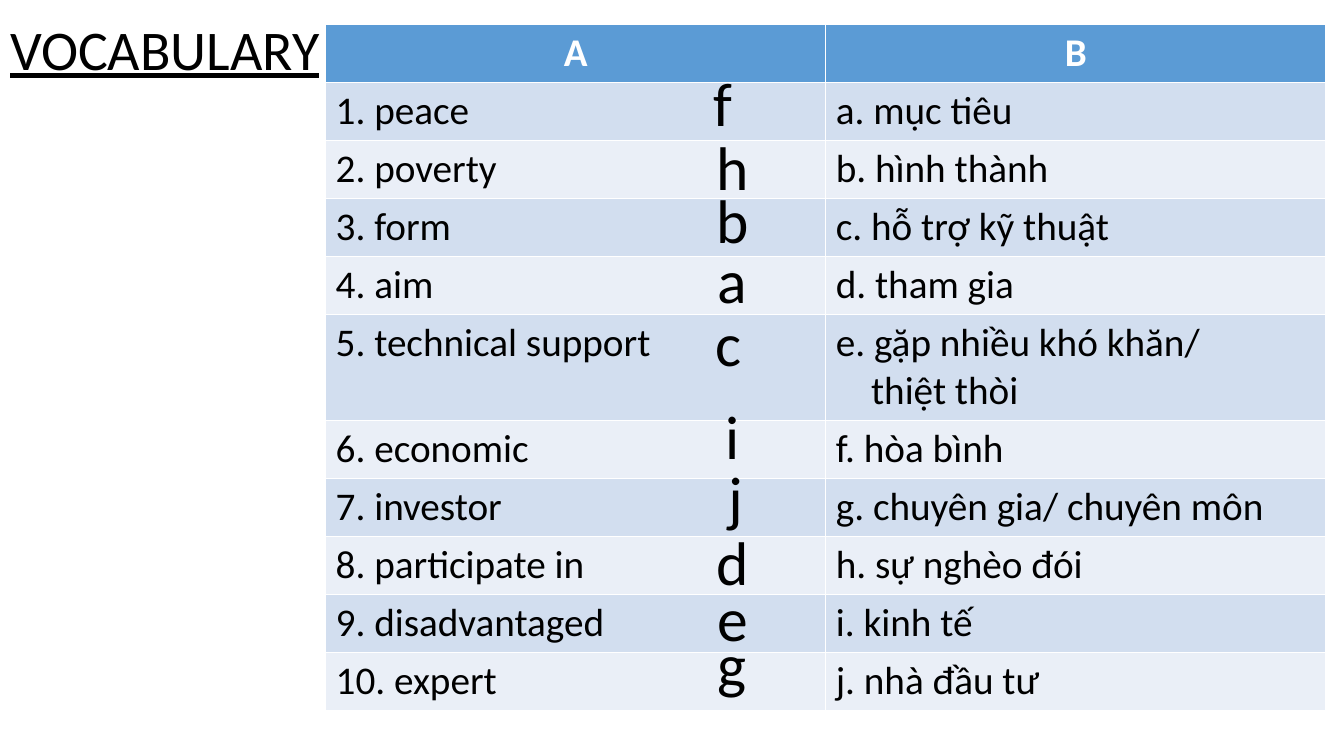
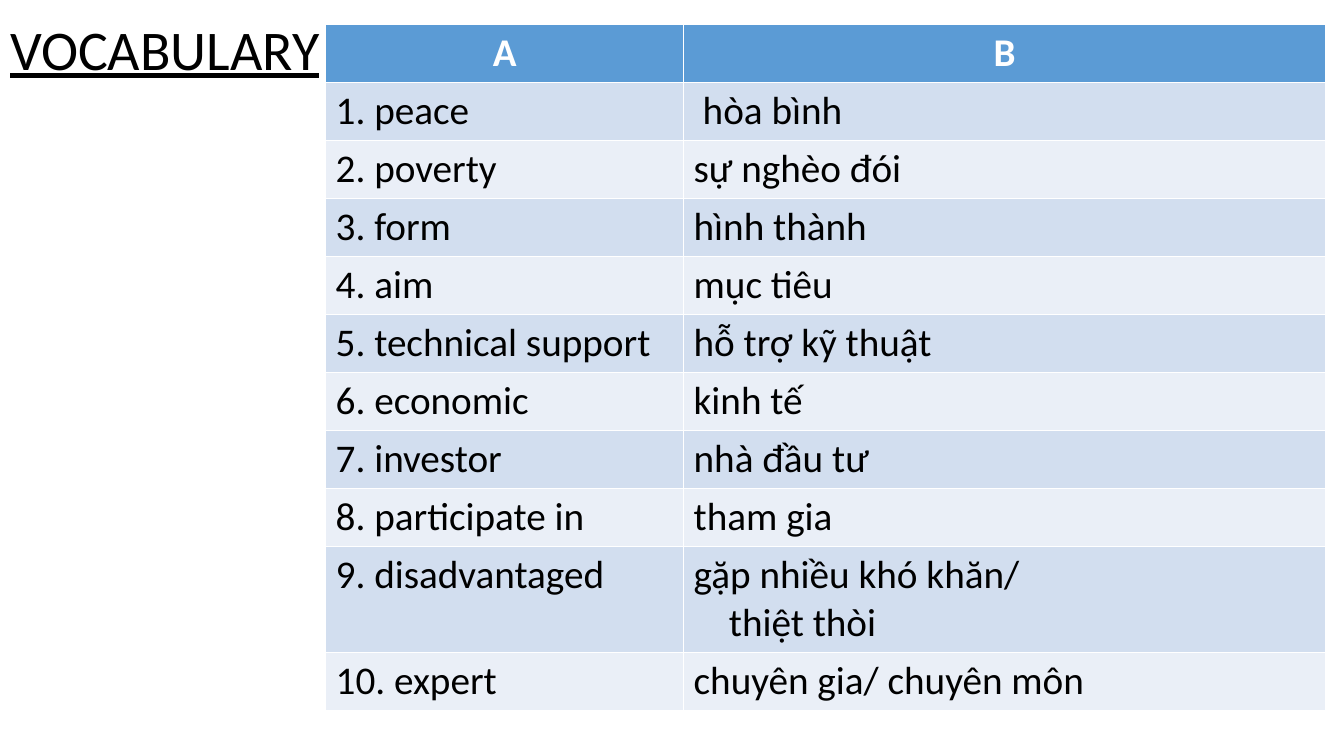
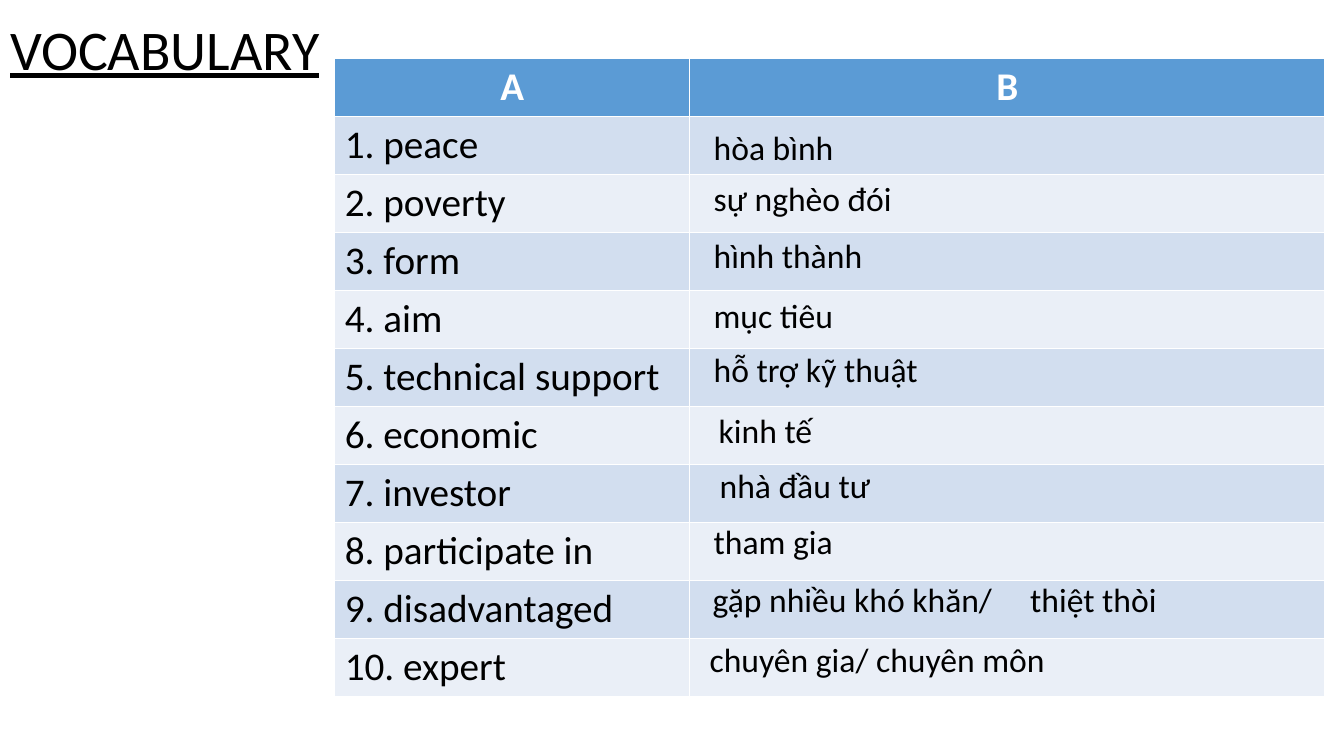
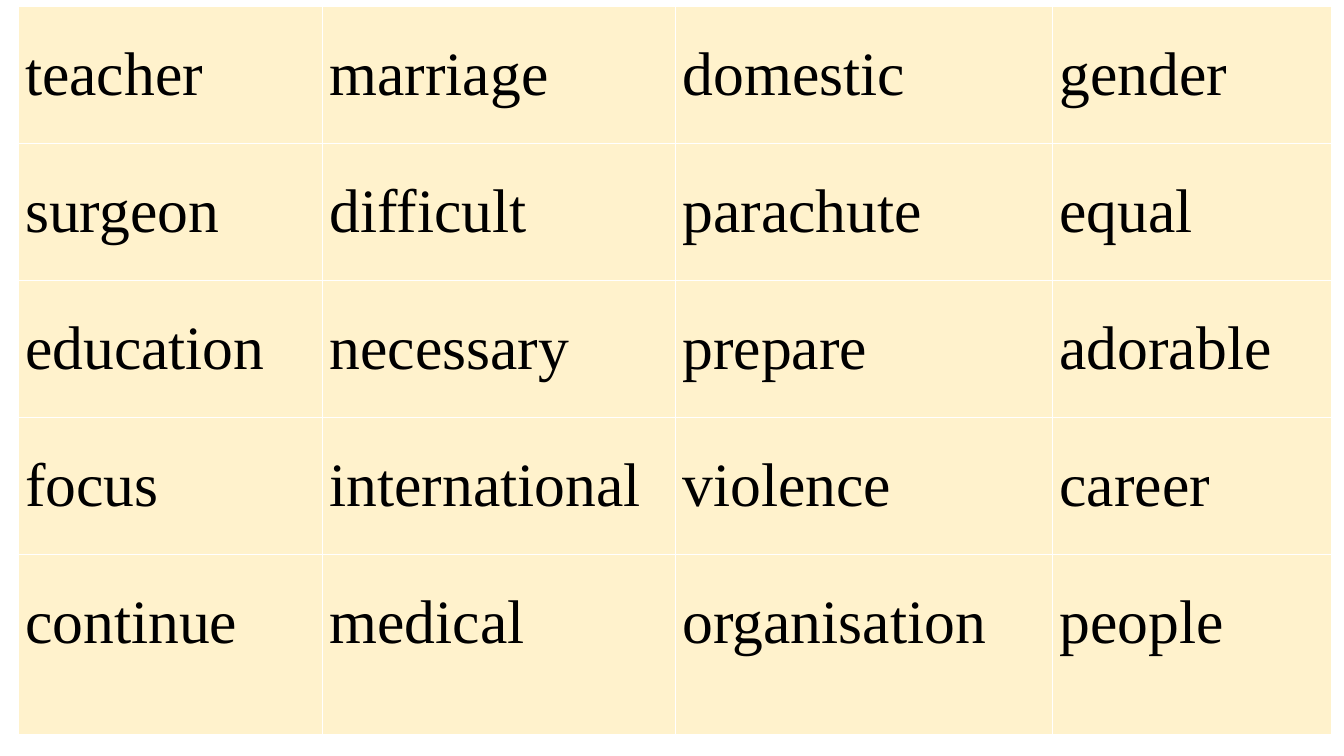
from lxml import etree
from pptx import Presentation
from pptx.dml.color import RGBColor
from pptx.enum.text import MSO_ANCHOR, MSO_AUTO_SIZE, PP_ALIGN
from pptx.oxml.ns import qn
from pptx.util import Inches, Pt

COLORS = {
    "text": "000000",
    "header_text": "FFFFFF",
    "header": "5B9BD5",
    "odd_row": "D2DEEF",
    "even_row": "EAEFF7",
    "word_cell": "FFF2CC",
}

# Word, its meaning, and the letter that answers it in the matching exercise
VOCABULARY = [
    ("peace", "hòa bình", "f"),
    ("poverty", "sự nghèo đói", "h"),
    ("form", "hình thành", "b"),
    ("aim", "mục tiêu", "a"),
    ("technical support", "hỗ trợ kỹ thuật", "c"),
    ("economic", "kinh tế", "i"),
    ("investor", "nhà đầu tư", "j"),
    ("participate in", "tham gia", "d"),
    ("disadvantaged", "gặp nhiều khó khăn/\nthiệt thòi", "e"),
    ("expert", "chuyên gia/ chuyên môn", "g"),
]
words = [f"{i}. {word}" for i, (word, _, _) in enumerate(VOCABULARY, 1)]
meanings = [meaning for _, meaning, _ in VOCABULARY]
choices = sorted(f"{letter}. {meaning}" for _, meaning, letter in VOCABULARY)


def format_text(tf, size, color="text", font="Calibri", bold=False,
                align=PP_ALIGN.LEFT):
    for p in tf.paragraphs:
        p.alignment = align
        for r in p.runs:
            r.font.size = Pt(size)
            r.font.name = font
            r.font.bold = bold
            r.font.color.rgb = RGBColor.from_string(COLORS[color])


def add_text(s, left, top, width, height, content, size, align=PP_ALIGN.LEFT):
    sp = s.shapes.add_textbox(Inches(left), Inches(top), Inches(width), Inches(height))
    tf = sp.text_frame
    tf.word_wrap = True
    tf.text = content
    format_text(tf, size, align=align)
    return tf


prs = Presentation()
prs.slide_width = Inches(13.33)
prs.slide_height = Inches(7.5)

# Slides 1 to 3: title and two-column vocabulary table
# (left, top, column widths, texts of column B)
layouts = [
    (3.23, 0.24, (4.96, 4.96), choices),
    (3.23, 0.24, (3.55, 6.37), meanings),
    (3.32, 0.58, (3.52, 6.3), [""] * len(words)),
]
slides, tables = [], []
for left, top, widths, column_b in layouts:
    s = prs.slides.add_slide(prs.slide_layouts[5])
    title = s.shapes.title
    title.left, title.top = Inches(0), Inches(0.09)
    title.width, title.height = Inches(3.32), Inches(0.77)
    tf = title.text_frame
    tf.text = "VOCABULARY"
    tf.auto_size = MSO_AUTO_SIZE.NONE
    tf.vertical_anchor = MSO_ANCHOR.TOP
    format_text(tf, 40)
    tf.paragraphs[0].runs[0].font.underline = True

    rows = [("A", "B"), *zip(words, column_b)]
    table = s.shapes.add_table(len(rows), 2, Inches(left), Inches(top),
                               Inches(sum(widths)), Inches(6.23)).table
    for column, width in zip(table.columns, widths):
        column.width = Inches(width)
    for i, row in enumerate(rows):
        fill = "header" if i == 0 else "odd_row" if i % 2 else "even_row"
        for j, content in enumerate(row):
            cell = table.cell(i, j)
            cell.fill.solid()
            cell.fill.fore_color.rgb = RGBColor.from_string(COLORS[fill])
            cell.text = content
            if i == 0:
                format_text(cell.text_frame, 28, "header_text", bold=True,
                            align=PP_ALIGN.CENTER)
            else:
                format_text(cell.text_frame, 28)
            # Continuation lines are indented
            for p in cell.text_frame.paragraphs[1:]:
                p._p.get_or_add_pPr().set("marL", str(Inches(0.35)))
    slides.append(s)
    tables.append(table)

# Slide 1: answer letters
letter_places = [(6.76, 0.59), (6.86, 1.23), (6.86, 1.76), (6.86, 2.35), (6.82, 2.98),
                 (6.86, 3.9), (6.89, 4.5), (6.86, 5.15), (6.86, 5.7), (6.86, 6.16)]
for (_, _, letter), (left, top) in zip(VOCABULARY, letter_places):
    add_text(slides[0], left, top, 0.81, 0.84, letter, 44, PP_ALIGN.CENTER)

# Slide 2: the first meaning stands slightly to the right
tables[1].cell(1, 1).margin_left = Inches(0.19)

# Slide 3: meanings laid over the empty column (left, top, width)
meaning_places = [(6.98, 1.21, 1.51), (6.98, 1.72, 2.26), (6.98, 2.28, 1.89),
                  (6.98, 2.88, 1.47), (6.98, 3.41, 2.46), (7.03, 4.02, 1.29),
                  (7.04, 4.56, 1.83), (6.98, 5.12, 1.59), (6.97, 5.69, 6.3),
                  (6.94, 6.29, 3.85)]
for meaning, (left, top, width) in zip(meanings, meaning_places):
    tf = add_text(slides[2], left, top, width, 0.5, meaning.replace("\n", "\t"), 24)
    if "\n" in meaning:
        tabs = etree.SubElement(tf.paragraphs[0]._p.get_or_add_pPr(), qn("a:tabLst"))
        etree.SubElement(tabs, qn("a:tab"), pos=str(Inches(3.15)), algn="l")

# Slide 4: word grid
word_grid = [
    ("teacher", "marriage", "domestic", "gender"),
    ("surgeon", "difficult", "parachute", "equal"),
    ("education", "necessary", "prepare", "adorable"),
    ("focus", "international", "violence", "career"),
    ("continue", "medical", "organisation", "people"),
]
grid_widths = (3.02, 3.5, 3.74, 2.77)
grid_heights = (1.36, 1.36, 1.36, 1.36, 1.79)
s = prs.slides.add_slide(prs.slide_layouts[6])
table = s.shapes.add_table(len(word_grid), len(grid_widths), Inches(0.18), Inches(0.06),
                           Inches(sum(grid_widths)), Inches(sum(grid_heights))).table
for column, width in zip(table.columns, grid_widths):
    column.width = Inches(width)
for i, (row, height) in enumerate(zip(word_grid, grid_heights)):
    table.rows[i].height = Inches(height)
    for j, word in enumerate(row):
        cell = table.cell(i, j)
        cell.fill.solid()
        cell.fill.fore_color.rgb = RGBColor.from_string(COLORS["word_cell"])
        cell.margin_left = cell.margin_right = Inches(0.07)
        cell.margin_top = cell.margin_bottom = 0
        cell.text = word
        format_text(cell.text_frame, 44, font="Times New Roman")
        cell.text_frame.paragraphs[0].line_spacing = 1.5

prs.save("out.pptx")
